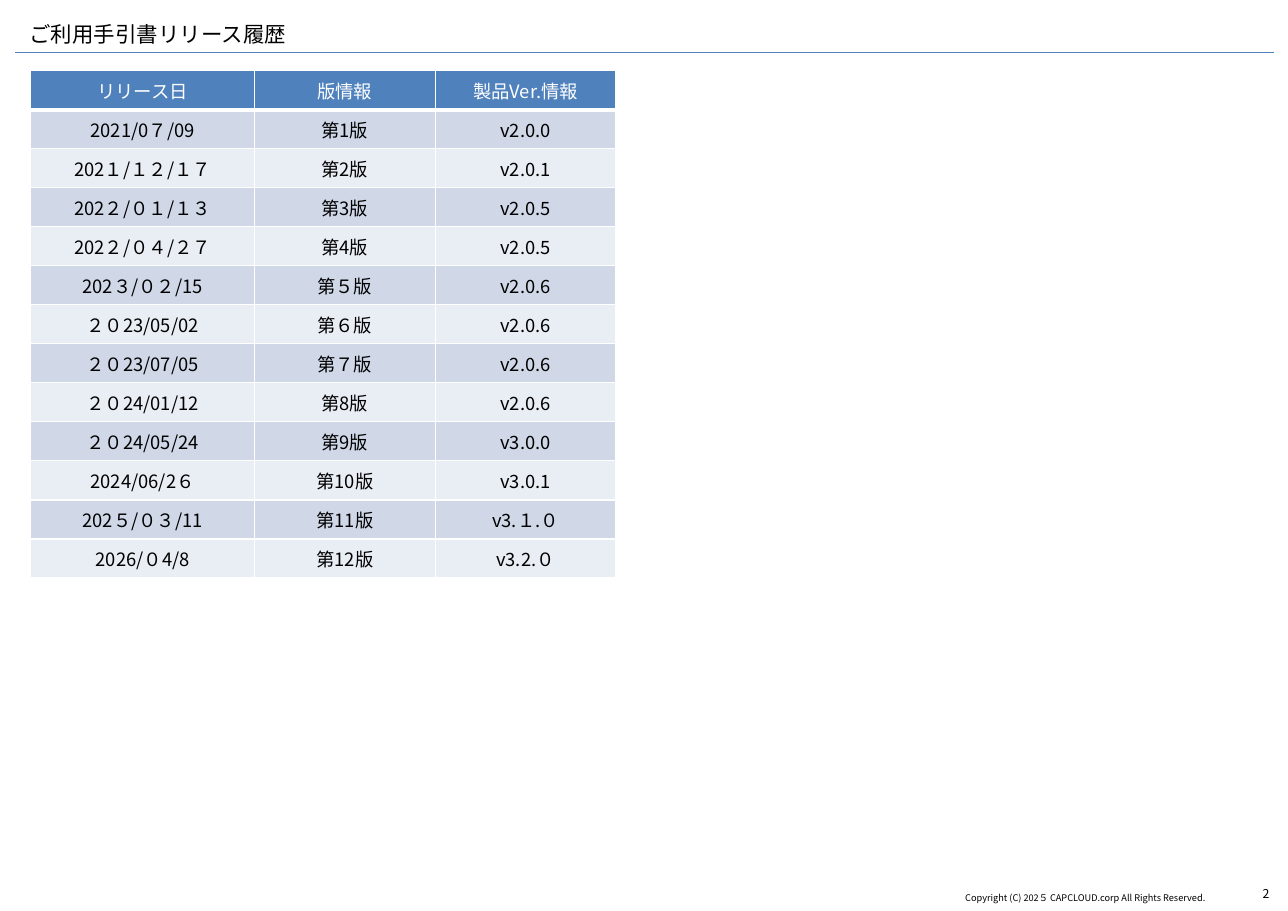
from pptx import Presentation
from pptx.dml.color import RGBColor
from pptx.enum.shapes import MSO_CONNECTOR as CONN
from pptx.enum.text import MSO_ANCHOR as ANCHOR, PP_ALIGN as ALIGN
from pptx.oxml.ns import qn
from pptx.util import Inches, Pt
from lxml.etree import SubElement

FONT = "Noto Sans CJK JP"
BLACK = RGBColor(0x00, 0x00, 0x00)
WHITE = RGBColor(0xFF, 0xFF, 0xFF)
BLUE = RGBColor(0x4F, 0x81, 0xBD)
BAND_DARK = RGBColor(0xD0, 0xD8, 0xE8)
BAND_LIGHT = RGBColor(0xE9, 0xED, 0xF4)

COLUMN_WIDTHS = [2.03, 1.64, 1.64]
RELEASES = [
    ("リリース日", "版情報", "製品Ver.情報"),
    ("2021/0７/09", "第1版", "v2.0.0"),
    ("202１/１２/１７", "第2版", "v2.0.1"),
    ("202２/０１/１３", "第3版", "v2.0.5"),
    ("202２/０４/２７", "第4版", "v2.0.5"),
    ("202３/０２/15", "第５版", "v2.0.6"),
    ("２０23/05/02", "第６版", "v2.0.6"),
    ("２０23/07/05", "第７版", "v2.0.6"),
    ("２０24/01/12", "第8版", "v2.0.6"),
    ("２０24/05/24", "第9版", "v3.0.0"),
    ("2024/06/2６", "第10版", "v3.0.1"),
    ("202５/０３/11", "第11版", "v3.１.０"),
    ("2026/０4/8", "第12版", "v3.2.０"),
]


def add_run(p, text, size, color, align):
    """Add one formatted run to a paragraph."""
    p.alignment = align
    r = p.add_run()
    r.text = text
    r.font.name = FONT
    r.font.size = Pt(size)
    r.font.color.rgb = color
    SubElement(r.font._element, qn("a:ea"), typeface=FONT)


def add_text(slide, box, text, size, align=ALIGN.LEFT):
    """Place a one-line text box."""
    tf = slide.shapes.add_textbox(*map(Inches, box)).text_frame
    tf.word_wrap = True
    add_run(tf.paragraphs[0], text, size, BLACK, align)


def add_heading(slide, left, top, width, height):
    """Place the title above a rule that spans the region."""
    add_text(slide, (left + 0.03, top, 5.64, height), "ご利用手引書リリース履歴", 14)
    y = Inches(top + height)
    rule = slide.shapes.add_connector(
        CONN.STRAIGHT, Inches(left), y, Inches(left + width), y)
    rule.line.color.rgb = BLUE
    rule.line.width = Pt(0.75)
    SubElement(rule._element.spPr, qn("a:effectLst"))


def set_borders(cell, bottom):
    """Draw white cell borders with the given bottom width."""
    tc_pr = cell._tc.get_or_add_tcPr()
    for side, width in (("L", 1), ("R", 1), ("T", 1), ("B", bottom)):
        ln = SubElement(tc_pr, qn(f"a:ln{side}"), w=str(Pt(width)))
        fill = SubElement(ln, qn("a:solidFill"))
        SubElement(fill, qn("a:srgbClr"), val=str(WHITE))


def add_history(slide, left, top, width, height):
    """Place the banded release history table."""
    table = slide.shapes.add_table(
        len(RELEASES), len(COLUMN_WIDTHS),
        *map(Inches, (left, top, width, height))).table
    for column, share in zip(table.columns, COLUMN_WIDTHS):
        column.width = Inches(width * share / sum(COLUMN_WIDTHS))
    for i, release in enumerate(RELEASES):
        header = i == 0
        band = BLUE if header else BAND_DARK if i % 2 else BAND_LIGHT
        for j, text in enumerate(release):
            cell = table.cell(i, j)
            set_borders(cell, 3 if header else 1)
            cell.fill.solid()
            cell.fill.fore_color.rgb = band
            cell.vertical_anchor = ANCHOR.MIDDLE
            add_run(cell.text_frame.paragraphs[0], text, 12,
                    WHITE if header else BLACK, ALIGN.CENTER)


def add_footer(slide, left, top, width, height):
    """Place the copyright line and the page number."""
    add_text(slide, (left, top + 0.05, 3.11, 0.2),
             "Copyright (C) 202５ CAPCLOUD.corp All Rights Reserved.　", 6, ALIGN.RIGHT)
    add_text(slide, (left + width - 0.42, top, 0.42, height), "2", 8, ALIGN.RIGHT)


def main():
    """Build and save the release history slide."""
    prs = Presentation()
    prs.slide_width, prs.slide_height = Inches(11.69), Inches(8.27)
    slide = prs.slides.add_slide(prs.slide_layouts[6])
    add_heading(slide, 0.14, 0.14, 11.42, 0.34)
    add_history(slide, 0.28, 0.64, 5.31, 4.61)
    add_footer(slide, 8.01, 8, 3.61, 0.24)
    prs.save("out.pptx")


if __name__ == "__main__":
    main()
